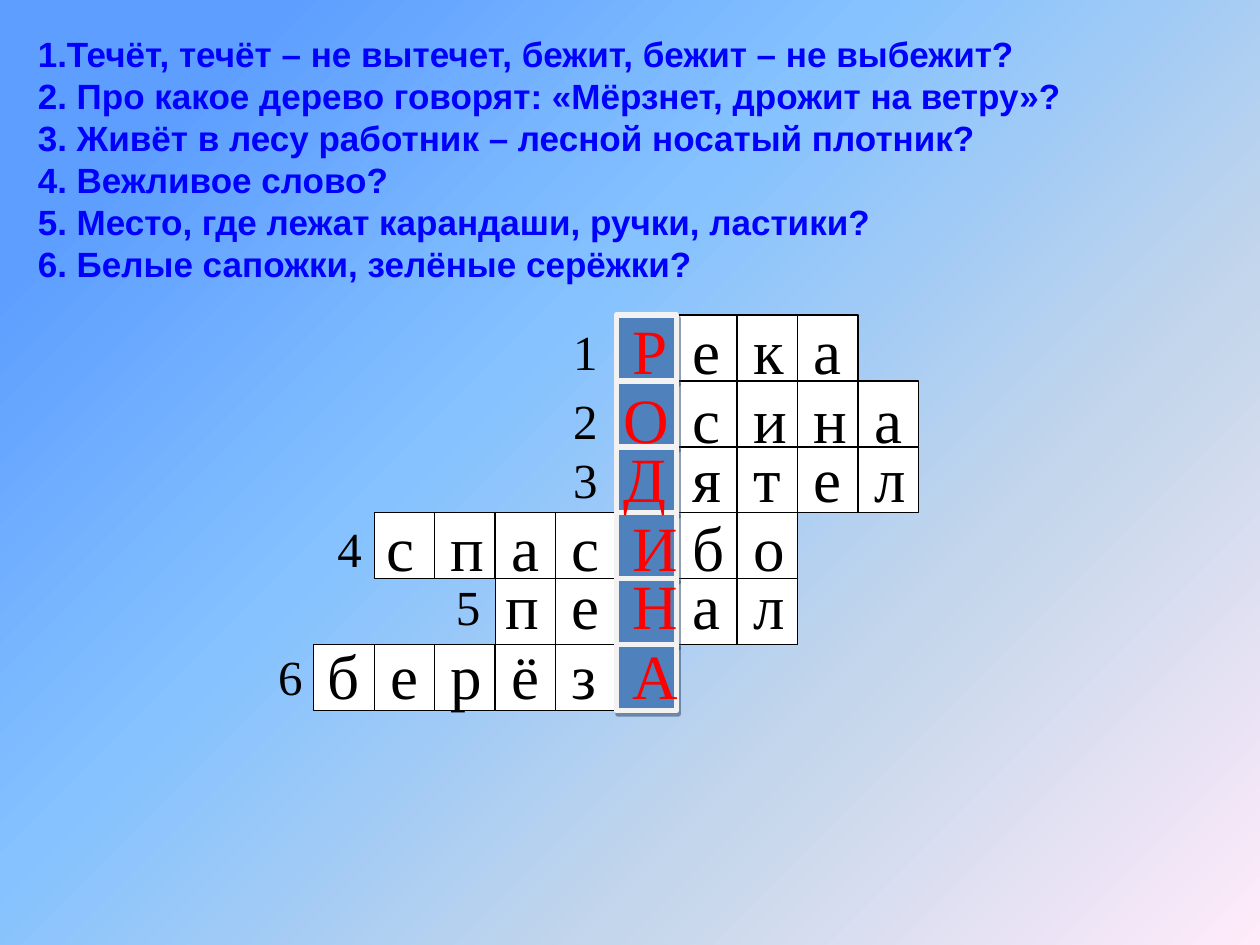
from pptx import Presentation
from pptx.dml.color import RGBColor
from pptx.enum.shapes import MSO_SHAPE as Shape
from pptx.enum.text import MSO_ANCHOR as Anchor, MSO_AUTO_SIZE as AutoSize
from pptx.oxml import parse_xml
from pptx.oxml.ns import nsdecls
from pptx.util import Inches, Pt
from lxml.etree import SubElement

A = "{http://schemas.openxmlformats.org/drawingml/2006/main}"


def color(value):
    return RGBColor.from_string(value)


def add_text(left, top, width, height):
    box = slide.shapes.add_textbox(Inches(left), Inches(top), Inches(width), Inches(height))
    box.text_frame.word_wrap = True
    return box.text_frame.paragraphs[0]


presentation = Presentation()
presentation.slide_width, presentation.slide_height = Inches(10), Inches(7.5)
slide = presentation.slides.add_slide(presentation.slide_layouts[1])
title = slide.shapes.title
title.element.getparent().remove(title.element)

# Background gradient
stops = [(13, "5E9EFF"), (40, "85C2FF"), (70, "C4D6EB"), (100, "FFEBFA")]
stop_xml = "".join(f'<a:gs pos="{position * 1000}"><a:srgbClr val="{value}"/></a:gs>'
                   for position, value in stops)
slide.element.cSld.insert(0, parse_xml(
    f'<p:bg {nsdecls("p", "a")}><p:bgPr><a:gradFill><a:gsLst>{stop_xml}</a:gsLst>'
    '<a:lin ang="2700000" scaled="0"/></a:gradFill><a:effectLst/></p:bgPr></p:bg>'))

# Questions
questions = [
    "1.Течёт, течёт – не вытечет, бежит, бежит – не выбежит?",
    "2. Про какое дерево говорят: «Мёрзнет, дрожит на ветру»?",
    "3. Живёт в лесу работник – лесной носатый плотник?",
    "4. Вежливое слово?",
    "5. Место, где лежат карандаши, ручки, ластики?",
    "6. Белые сапожки, зелёные серёжки?",
]
body = slide.placeholders[1]
body.left, body.top, body.width, body.height = map(Inches, (0.2, 0.21, 9.61, 2.1))
frame = body.text_frame
frame.auto_size = AutoSize.NONE
frame.vertical_anchor = Anchor.TOP
frame.text = "\n".join(questions)
for paragraph in frame.paragraphs:
    properties = paragraph._p.get_or_add_pPr()
    properties.set("marL", str(Inches(0.38)))
    properties.set("indent", str(-Inches(0.38)))
    SubElement(properties, A + "buNone")
    paragraph.space_before = Pt(0)
    paragraph.font.name, paragraph.font.size, paragraph.font.bold = "Arial", Pt(20), True
    paragraph.font.color.rgb = color("0000FF")

# Crossword rows: word with its key letter in capitals, first column,
# word left, top and width, number left and width
rows = [
    ("Река", 5, 4.92, 2.42, 2.11, 4.45, 0.4),
    ("Осина", 5, 4.85, 2.97, 3.44, 4.45, 0.47),
    ("Дятел", 5, 4.85, 3.44, 3.44, 4.45, 0.47),
    ("спасИбо", 1, 2.97, 3.99, 3.67, 2.58, 0.39),
    ("пеНал", 3, 3.91, 4.45, 3.12, 3.52, 0.62),
    ("берёзА", 0, 2.5, 5, 3.2, 2.11, 0.39),
]
KEY_COLUMN = 5
GRID_LEFT, GRID_TOP = 2.49, 2.5
CELL_WIDTH, CELL_HEIGHT = 0.48, 3.14 / 6

# Cells, with the key column on top
cells = [(row, start + offset) for row, (word, start, *_) in enumerate(rows)
         for offset in range(len(word))]
cells.sort(key=lambda cell: cell[1] == KEY_COLUMN)
grid = slide.shapes.add_group_shape()
for row, column in cells:
    is_key = column == KEY_COLUMN
    cell = grid.shapes.add_shape(
        Shape.RECTANGLE, Inches(GRID_LEFT + column * CELL_WIDTH),
        Inches(GRID_TOP + row * CELL_HEIGHT), Inches(CELL_WIDTH), Inches(CELL_HEIGHT))
    cell.shadow.inherit = False
    cell.fill.solid()
    cell.fill.fore_color.rgb = color("4F81BD" if is_key else "FFFFFF")
    cell.line.color.rgb = color("F2F2F2" if is_key else "000000")
    cell.line.width = Pt(3 if is_key else 0.75)
    if is_key:
        effects = cell.element.spPr.find(A + "effectLst")
        shadow = SubElement(effects, A + "outerShdw", blurRad="0", dist=str(Pt(2.2)),
                            dir=str(63 * 60000), algn="ctr", rotWithShape="0")
        shade = SubElement(shadow, A + "srgbClr", val="243F60")
        SubElement(shade, A + "alpha", val="50000")

# Words and row numbers
for number, (word, start, left, top, width, number_left, number_width) in enumerate(rows, 1):
    paragraph = add_text(left, top, width, 0.71)
    tabs = SubElement(paragraph._p.get_or_add_pPr(), A + "tabLst")
    for column in range(start + 1, start + len(word)):
        stop = GRID_LEFT + column * CELL_WIDTH + 0.13 - (left + 0.1)
        SubElement(tabs, A + "tab", pos=str(Inches(stop)), algn="l")
    paragraph.font.name, paragraph.font.size = "Times New Roman", Pt(36)
    key = KEY_COLUMN - start
    text = "\t".join(word)
    for part, value in ((text[:2 * key], "000000"), (text[2 * key], "FF0000"),
                        (text[2 * key + 1:], "000000")):
        if part:
            run = paragraph.add_run()
            run.text = part
            run.font.color.rgb = color(value)

    paragraph = add_text(number_left, top + 0.08, number_width, 0.57)
    paragraph.text = str(number)
    paragraph.font.name, paragraph.font.size = "Times New Roman", Pt(28)
    paragraph.font.color.rgb = color("000000")

presentation.save("out.pptx")
